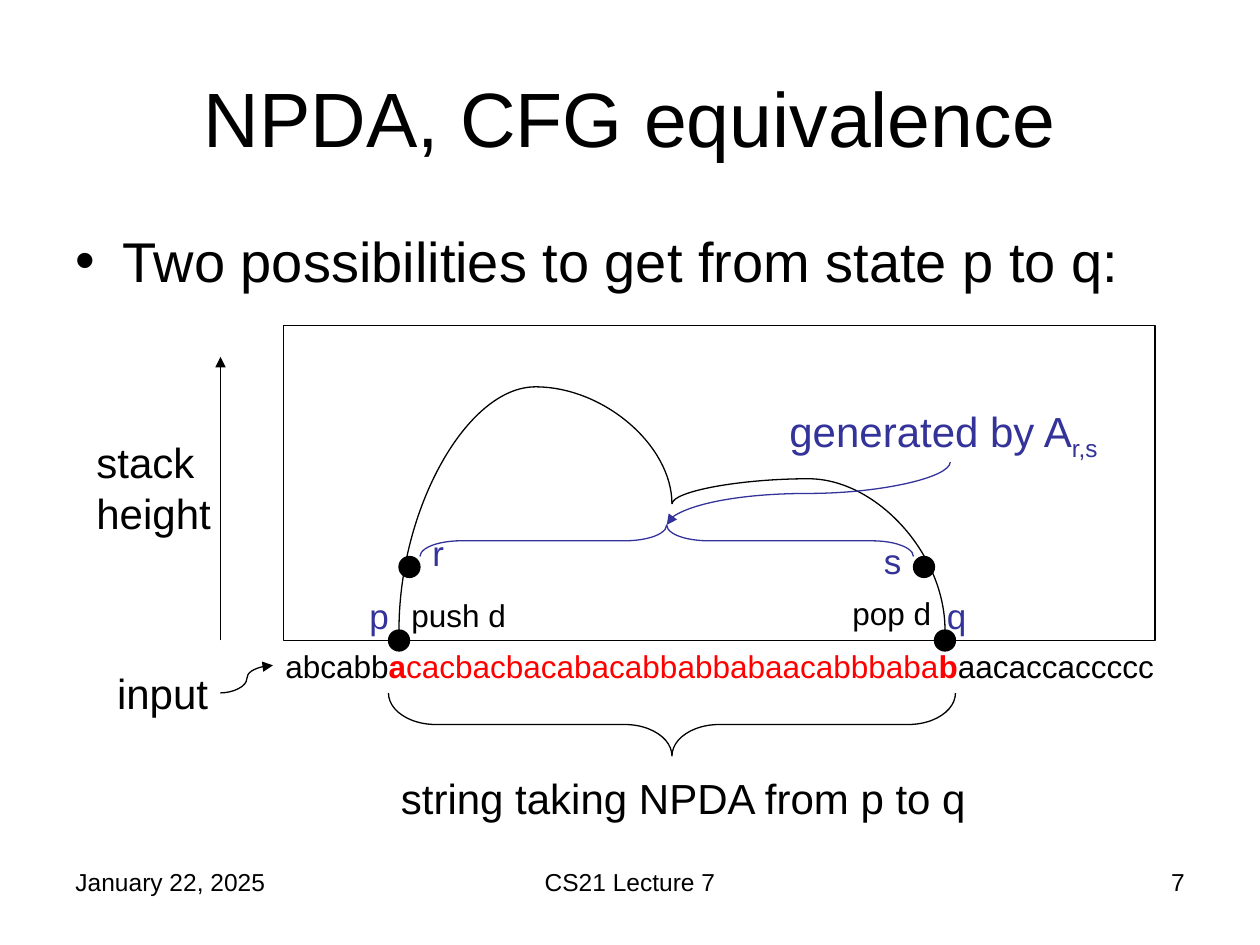
from lxml import etree
from pptx import Presentation
from pptx.dml.color import RGBColor
from pptx.enum import shapes, text
from pptx.oxml.ns import qn
from pptx import util as u

PX = 9525  # 96 px to the inch
HUES = {"ink": "000000", "blue": "333399", "red": "FF0000"}
KIND = shapes.MSO_SHAPE
ALIGN = text.PP_ALIGN

deck = Presentation()
deck.slide_width, deck.slide_height = 960 * PX, 720 * PX
slide = deck.slides.add_slide(deck.slide_layouts[5])


def write(box, runs, size, align=ALIGN.LEFT):
    """Fill a box with one paragraph of (words, hue, bold) runs."""
    frame = box.text_frame
    frame.word_wrap = True
    para = frame.paragraphs[0]
    para.alignment = align
    for words, hue, bold in runs:
        run = para.add_run()
        run.text = words
        run.font.name, run.font.size, run.font.bold = "Arial", u.Pt(size), bold
        run.font.color.rgb = RGBColor.from_string(HUES[hue])
    return para


def link(kind, ends, hue="ink", turn=0, bend=None, arrow=False):
    """Draw a connector, turned by degrees, with an optional bend and arrowhead."""
    line = slide.shapes.add_connector(kind, *[n * PX for n in ends])
    line.line.width = u.Pt(0.75)
    line.line.color.rgb = RGBColor.from_string(HUES[hue])
    props = line._element.spPr
    if turn:
        props.find(qn("a:xfrm")).set("rot", str(turn * 60000))
    if bend is not None:
        guides = props.find(qn("a:prstGeom")).get_or_add_avLst()
        etree.SubElement(guides, qn("a:gd"), name="adj1", fmla=f"val {round(bend * 100000)}")
    if arrow:
        etree.SubElement(props.find(qn("a:ln")), qn("a:tailEnd"), type="triangle")
    etree.SubElement(props, qn("a:effectLst"))


# Title
title = slide.shapes.title
title.left, title.top, title.width, title.height = [n * PX for n in (48, 29, 864, 120)]
title.text_frame.vertical_anchor = text.MSO_ANCHOR.MIDDLE
write(title, [("NPDA, CFG equivalence", "ink", False)], 44, ALIGN.CENTER)

# Bullet
body = slide.shapes.add_textbox(*[n * PX for n in (48, 168, 864, 72)])
para = write(body, [("Two possibilities to get from state p to q:", "ink", False)], 32)
props = para._p.get_or_add_pPr()
props.set("marL", str(36 * PX))
props.set("indent", str(-36 * PX))
etree.SubElement(props, qn("a:buFont"), typeface="Arial")
etree.SubElement(props, qn("a:buChar"), char="•")

# Frame, braces and dots: kind, place, hue, filled, turn
parts = [
    (KIND.RECTANGLE, (216, 248, 664, 240), "ink", False, 0),
    (KIND.LEFT_BRACE, (488, 336, 48, 432), "ink", False, 270),
    (KIND.LEFT_BRACE, (496, 224, 24, 376), "blue", False, 90),
]
for x, y in [(296, 480), (712, 480), (304, 424), (696, 424)]:
    parts.append((KIND.OVAL, (x, y, 16, 16), "ink", True, 0))
for kind, place, hue, filled, turn in parts:
    part = slide.shapes.add_shape(kind, *[n * PX for n in place])
    part.shadow.inherit = False
    part.rotation = turn
    tint = RGBColor.from_string(HUES[hue])
    part.line.color.rgb = tint
    part.line.width = u.Pt(0.75)
    if filled:
        part.fill.solid()
        part.fill.fore_color.rgb = tint
    else:
        part.fill.background()
    if kind == KIND.LEFT_BRACE:
        part.adjustments[0] = 0.75 if hue == "ink" else 1.31
        part.adjustments[1] = 0.5
        if hue == "blue":
            part._element.spPr.find(qn("a:xfrm")).set("flipV", "1")

# Axis, pointers and the stack height curve
STRAIGHT, CURVE = shapes.MSO_CONNECTOR.STRAIGHT, shapes.MSO_CONNECTOR.CURVE
link(STRAIGHT, (168, 488, 168, 272), arrow=True)
link(CURVE, (168, 528, 208, 507), bend=0.5, arrow=True)
link(CURVE, (360, 328, 456, 536), turn=270, bend=1.93)
link(CURVE, (568, 536, 664, 328), turn=90, bend=-0.2)
link(CURVE, (592, 268, 640, 484), "blue", turn=90, bend=0.5, arrow=True)

# Labels: words, place, size, hue, alignment
labels = [
    ("stack height", (64, 328, 128, 86), 24, "ink", ALIGN.LEFT),
    ("input", (72, 504, 96, 48), 24, "ink", ALIGN.RIGHT),
    ("string taking NPDA from p to q", (296, 584, 464, 48), 24, "ink", ALIGN.LEFT),
    ("p", (272, 448, 40, 41), 20, "blue", ALIGN.LEFT),
    ("q", (712, 448, 40, 41), 20, "blue", ALIGN.LEFT),
    ("r", (320, 400, 40, 41), 20, "blue", ALIGN.LEFT),
    ("s", (664, 406, 40, 41), 20, "blue", ALIGN.LEFT),
    ("push d", (304, 449, 96, 38), 18, "ink", ALIGN.LEFT),
    ("pop d", (640, 448, 96, 38), 18, "ink", ALIGN.LEFT),
    ("January 22, 2025", (48, 656, 224, 50), 14, "ink", ALIGN.LEFT),
    ("CS21 Lecture 7", (328, 656, 304, 50), 14, "ink", ALIGN.CENTER),
    ("7", (688, 656, 224, 50), 14, "ink", ALIGN.RIGHT),
]
for words, place, size, hue, align in labels:
    box = slide.shapes.add_textbox(*[n * PX for n in place])
    write(box, [(words, hue, False)], size, align)

# Input string with the part read between p and q in red
tape = slide.shapes.add_textbox(*[n * PX for n in (208, 488, 696, 38)])
write(tape, [
    ("abcabb", "ink", False),
    ("a", "red", True),
    ("cacbacbacabacabbabbabaacabbbaba", "red", False),
    ("b", "red", True),
    ("aacaccaccccc", "ink", False),
], 18)

# Variable with its subscript
rule = slide.shapes.add_textbox(*[n * PX for n in (592, 304, 264, 48)])
para = write(rule, [("generated by A", "blue", False), ("r,s", "blue", False)], 24)
para.runs[1].font._element.set("baseline", "-25000")

deck.save("out.pptx")
